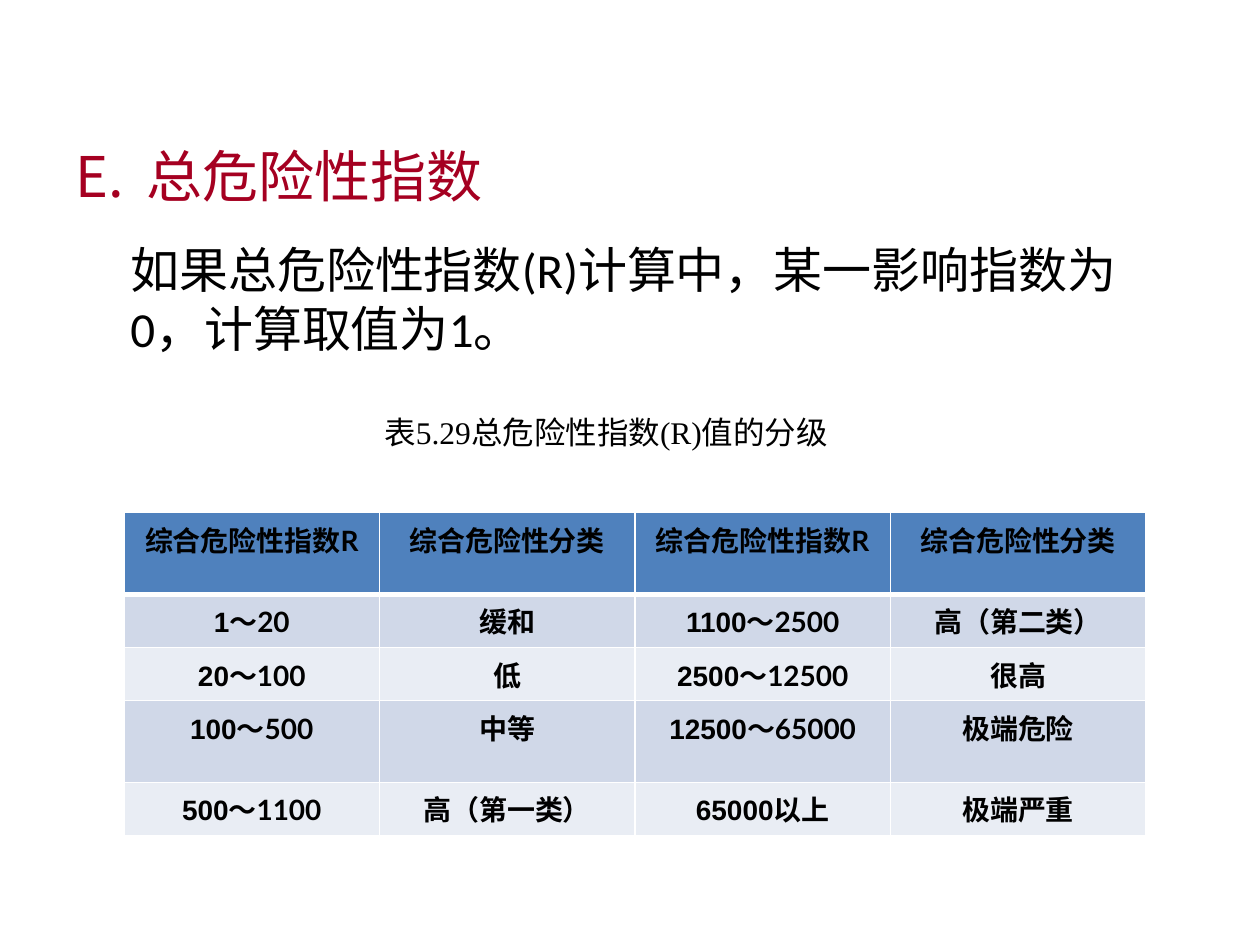
from dataclasses import dataclass
from itertools import groupby

from lxml.etree import SubElement
from pptx import Presentation
from pptx.dml.color import RGBColor
from pptx.enum.text import PP_ALIGN
from pptx.oxml.ns import qn
from pptx.util import Cm, Pt


@dataclass(frozen=True)
class Theme:
    red: str = "A50021"
    black: str = "000000"
    white: str = "FFFFFF"
    head: str = "4F81BD"
    bands: tuple = ("D0D8E8", "E9EDF4")
    sans: str = "Calibri"
    serif: str = "Times New Roman"
    lead: str = "Arial"
    tail: str = "Lato"
    title: int = 32
    body: int = 28
    label: int = 18
    cell: int = 16


THEME = Theme()
ROWS = [
    ["综合危险性指数R", "综合危险性分类", "综合危险性指数R", "综合危险性分类"],
    ["1～20", "缓和", "1100～2500", "高（第二类）"],
    ["20～100", "低", "2500～12500", "很高"],
    ["100～500", "中等", "12500～65000", "极端危险"],
    ["500～1100", "高（第一类）", "65000以上", "极端严重"],
]
HEIGHTS = [1.65, 1.07, 1.07, 1.65, 1.07]


def add_run(para, text, size, face, color=THEME.black, bold=False):
    run = para.add_run()
    run.text = text
    font = run.font
    font.size, font.name, font.bold = Pt(size), face, bold
    font.color.rgb = RGBColor.from_string(color)


def add_frame(slide, left, top, width, height):
    box = slide.shapes.add_textbox(Cm(left), Cm(top), Cm(width), Cm(height))
    box.text_frame.word_wrap = True
    return box.text_frame


def indent(para, left, first=0):
    props = para._p.get_or_add_pPr()
    props.set("marL", str(Cm(left)))
    props.set("indent", str(Cm(first)))
    return props


def add_body(slide, left, top, width, height):
    frame = add_frame(slide, left, top, width, height)
    title = frame.paragraphs[0]
    props = indent(title, 1.43, -1.43)
    SubElement(props, qn("a:buFont"), typeface=THEME.sans)
    SubElement(props, qn("a:buAutoNum"), type="alphaUcPeriod", startAt="5")
    add_run(title, "总危险性指数", THEME.title, THEME.sans, THEME.red)
    note = frame.add_paragraph()
    indent(note, 1.11)
    note.space_before = Pt(18)
    add_run(note, "如果总危险性指数(R)计算中，某一影响指数为0，计算取值为1。",
            THEME.body, THEME.sans)


def add_label(slide, left, top, width, height):
    para = add_frame(slide, left, top, width, height).paragraphs[0]
    add_run(para, "表5.29总危险性指数(R)值的分级", THEME.label, THEME.serif)


def add_edge(cell, side, points):
    line = SubElement(cell._tc.get_or_add_tcPr(), qn("a:ln" + side),
                      w=str(Pt(points)))
    fill = SubElement(line, qn("a:solidFill"))
    SubElement(fill, qn("a:srgbClr"), val=THEME.white)


def fill_cell(cell, text, row):
    """Borders go in before the fill, as the schema orders them."""
    heavy = {(0, "B"), (1, "T")}
    for side in "LRTB":
        add_edge(cell, side, 3 if (row, side) in heavy else 1)
    cell.fill.solid()
    color = THEME.bands[(row - 1) % 2] if row else THEME.head
    cell.fill.fore_color.rgb = RGBColor.from_string(color)
    para = cell.text_frame.paragraphs[0]
    para.alignment = PP_ALIGN.CENTER
    for i, (latin, part) in enumerate(groupby(text, str.isascii)):
        face = (THEME.tail if i else THEME.lead) if latin else THEME.serif
        add_run(para, "".join(part), THEME.cell, face, bold=True)


def add_grid(slide, left, top, width):
    count = len(ROWS[0])
    table = slide.shapes.add_table(len(ROWS), count, Cm(left), Cm(top),
                                   Cm(width), Cm(sum(HEIGHTS))).table
    table.horz_banding = False
    for col in table.columns:
        col.width = Cm(width / count)
    for r, (texts, height) in enumerate(zip(ROWS, HEIGHTS)):
        table.rows[r].height = Cm(height)
        for c, text in enumerate(texts):
            fill_cell(table.cell(r, c), text, r)


def main():
    deck = Presentation()
    deck.slide_width, deck.slide_height = Cm(25.4), Cm(19.05)
    slide = deck.slides.add_slide(deck.slide_layouts[6])
    add_body(slide, 1.27, 2.72, 22.86, 14.3)
    add_grid(slide, 2.5, 10.33, 20.6)
    add_label(slide, 7.5, 8.2, 9.55, 1.02)
    deck.save("out.pptx")


if __name__ == "__main__":
    main()
